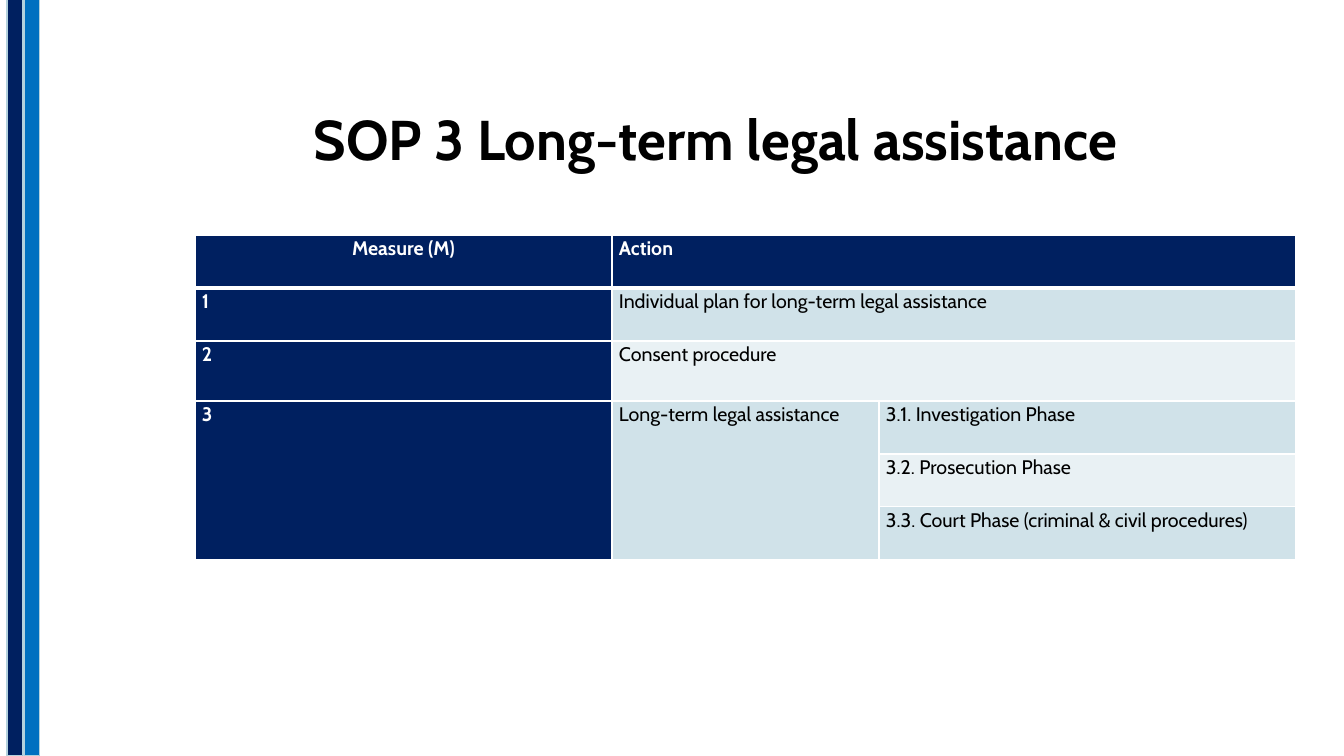
from lxml import etree
from pptx import Presentation
from pptx.dml.color import RGBColor
from pptx.enum.shapes import MSO_SHAPE
from pptx.enum.text import MSO_ANCHOR, MSO_AUTO_SIZE, PP_ALIGN
from pptx.oxml.ns import qn
from pptx.util import Emu, Pt

RECT = MSO_SHAPE.RECTANGLE
TOP, MIDDLE = MSO_ANCHOR.TOP, MSO_ANCHOR.MIDDLE
CENTER, JUSTIFY = PP_ALIGN.CENTER, PP_ALIGN.JUSTIFY
NO_FIT = MSO_AUTO_SIZE.NONE

NAVY = RGBColor(0x00, 0x20, 0x60)
BLUE = RGBColor(0x00, 0x70, 0xC0)
EDGE = RGBColor(0xB3, 0xD1, 0xDD)
BAND = RGBColor(0xD0, 0xE2, 0xE9)
PALE = RGBColor(0xE9, 0xF1, 0xF4)
WHITE = RGBColor(0xFF, 0xFF, 0xFF)
BLACK = RGBColor(0x00, 0x00, 0x00)
FONT = "Cabin"


def px(n):
    return Emu(round(n * 914400 / 100.8))


def write(tf, text, align, spacing, size, color, bold):
    p = tf.paragraphs[0]
    p.alignment, p.line_spacing = align, spacing
    r = p.add_run()
    r.text = text
    look = {"name": FONT, "size": Pt(size), "bold": bold}
    for key, value in look.items():
        setattr(r.font, key, value)
    r.font.color.rgb = color


prs = Presentation()
prs.slide_width, prs.slide_height = px(1344), px(756)
s = prs.slides.add_slide(prs.slide_layouts[5])

# Title, raised by a deep bottom inset
title = s.shapes.title
title_format = {"left": px(163), "top": px(76), "width": px(1105), "height": px(194)}
for key, value in title_format.items():
    setattr(title, key, value)
tf = title.text_frame
frame_format = {"word_wrap": True, "auto_size": NO_FIT, "vertical_anchor": MIDDLE,
                "margin_top": px(5), "margin_bottom": px(66)}
for key, value in frame_format.items():
    setattr(tf, key, value)
write(tf, "SOP 3 Long-term legal assistance", CENTER, 0.9, 40, BLACK, True)

# Table of measures
col_widths = [417, 267, 417]
row_heights = [53, 53, 60, 53, 53, 53]
rows = [
    ["Measure (M)", "Action", ""],
    ["1", "Individual plan for long-term legal assistance", ""],
    ["2", "Consent procedure", ""],
    ["3", "Long-term legal assistance", "3.1. Investigation Phase"],
    ["", "", "3.2. Prosecution Phase"],
    ["", "", "3.3. Court Phase (criminal & civil procedures)"],
]
table = s.shapes.add_table(len(rows), len(col_widths), px(195), px(235),
                           px(sum(col_widths)), px(sum(row_heights))).table
table.horz_banding = False
for col, width in zip(table.columns, col_widths):
    col.width = px(width)
for row, height in zip(table.rows, row_heights):
    row.height = px(height)

cell_format = {"margin_left": px(7), "margin_right": px(7), "margin_top": 0,
               "margin_bottom": 0, "vertical_anchor": TOP}
for i, texts in enumerate(rows):
    for j, text in enumerate(texts):
        cell = table.cell(i, j)
        for key, value in cell_format.items():
            setattr(cell, key, value)

        # White borders, heavier below the header row
        tcPr = cell._tc.get_or_add_tcPr()
        for side in ("L", "R", "T", "B"):
            heavy = (i, side) in ((0, "B"), (1, "T"))
            ln = etree.SubElement(tcPr, qn(f"a:ln{side}"), w=str(Pt(3 if heavy else 1)))
            fill = etree.SubElement(ln, qn("a:solidFill"))
            etree.SubElement(fill, qn("a:srgbClr"), val=str(WHITE))

        dark = i == 0 or j == 0
        cell.fill.solid()
        cell.fill.fore_color.rgb = NAVY if dark else BAND if i % 2 else PALE
        if text:
            align = CENTER if i == j == 0 else JUSTIFY
            write(cell.text_frame, text, align, 1.07, 14, WHITE if dark else BLACK, dark)

for i in range(3):
    table.cell(i, 1).merge(table.cell(i, 2))
for j in range(2):
    table.cell(3, j).merge(table.cell(5, j))

# Stripes on the left edge
for left, color in ((7, NAVY), (24, BLUE)):
    sp = s.shapes.add_shape(RECT, px(left), 0, px(16), px(756))
    sp.shadow.inherit = False
    sp.fill.solid()
    sp.fill.fore_color.rgb = color
    sp.line.color.rgb = EDGE
    sp.line.width = Pt(0.75)

prs.save("out.pptx")
